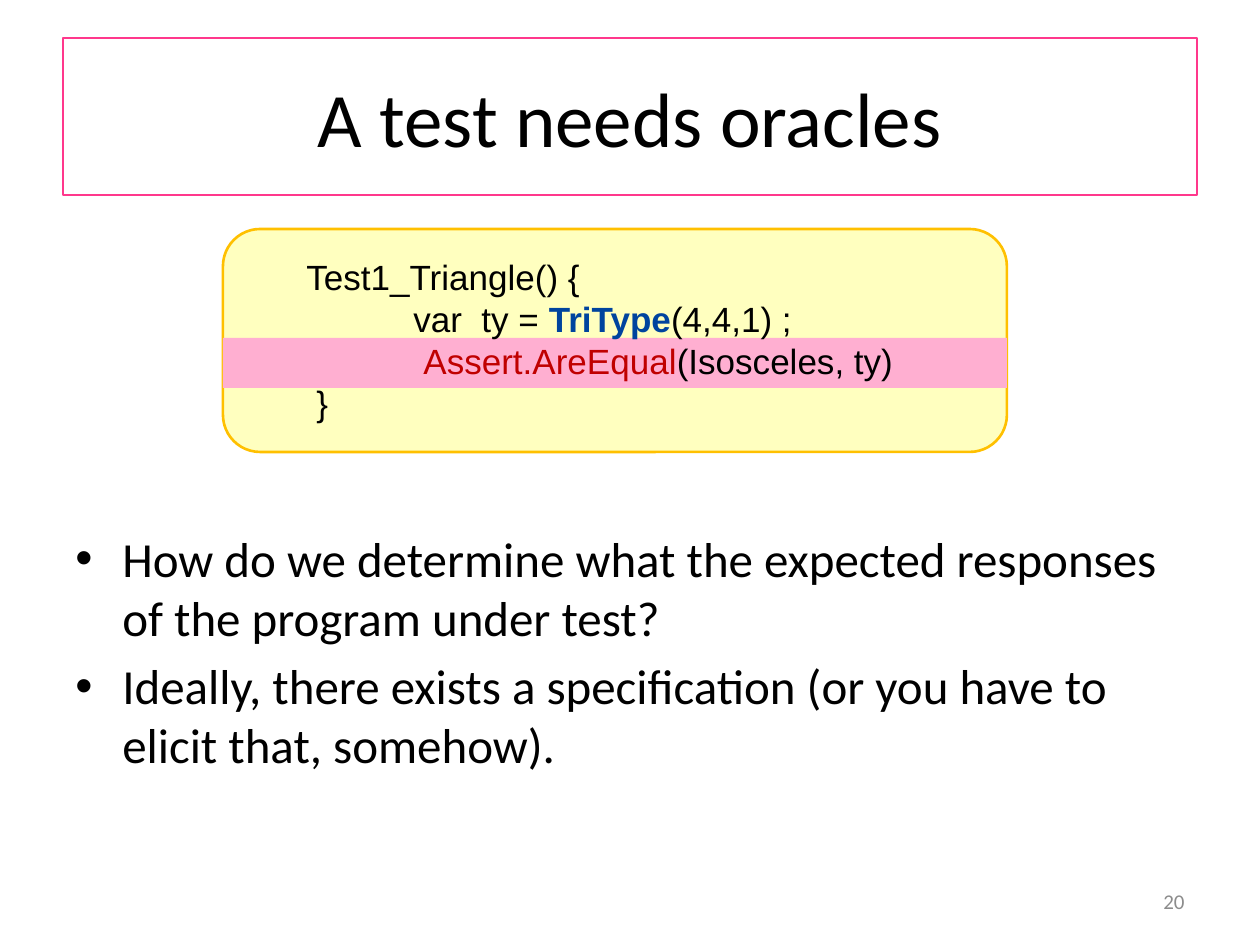
from pptx import Presentation
from pptx.dml.color import RGBColor as RGB
from pptx.enum.shapes import MSO_SHAPE as SHAPE
from pptx.enum.text import MSO_ANCHOR as ANCHOR, PP_ALIGN as ALIGN
from pptx.util import Pt
from lxml import etree

PX = 914400 / 126
THEME = {
    "text": "000000", "muted": "8C8C8C", "type": "00449E", "assert": "C00000",
    "title_line": "FF388C", "box": "FFFF00", "box_line": "FFC000", "band": "FFAFD1",
    "title_pt": 44, "body_pt": 28, "code_pt": 20, "number_pt": 12,
    "font": "Calibri", "code_font": "Arial",
}


def add_box(kind, at, fill=None, line=None, width=1):
    s = slide.shapes.add_shape(kind, *[round(v * PX) for v in at])
    s.shadow.inherit = False
    if fill:
        s.fill.solid()
        s.fill.fore_color.rgb = RGB.from_string(THEME[fill])
    else:
        s.fill.background()
    if line:
        s.line.color.rgb = RGB.from_string(THEME[line])
        s.line.width = Pt(width)
    else:
        s.line.fill.background()
    return s


def add_text(sp, paragraphs, size, font="font", anchor=ANCHOR.TOP, **para_format):
    """Each paragraph is a list of (text, colour, bold) runs."""
    tf = sp.text_frame
    tf.word_wrap = True
    tf.vertical_anchor = anchor
    for i, runs in enumerate(paragraphs):
        p = tf.paragraphs[0] if i == 0 else tf.add_paragraph()
        for name, value in para_format.items():
            setattr(p, name, value)
        for text, color, bold in runs:
            r = p.add_run()
            r.text = text
            for name, value in {"name": THEME[font], "size": Pt(THEME[size]), "bold": bold}.items():
                setattr(r.font, name, value)
            r.font.color.rgb = RGB.from_string(THEME[color])
    return tf


prs = Presentation()
prs.slide_width, prs.slide_height = round(1260 * PX), round(945 * PX)
slide = prs.slides.add_slide(prs.slide_layouts[6])

# Title
title = add_box(SHAPE.RECTANGLE, (63, 38, 1134, 157), line="title_line")
add_text(title, [[("A test needs oracles", "text", False)]], "title_pt",
         anchor=ANCHOR.MIDDLE, alignment=ALIGN.CENTER)

# Bulleted questions
bullets = [
    "How do we determine what the expected responses of the program under test?",
    "Ideally, there exists a specification (or you have to elicit that, somehow).",
]
body = add_box(SHAPE.RECTANGLE, (63, 522, 1134, 323))
tf = add_text(body, [[(t, "text", False)] for t in bullets], "body_pt",
              alignment=ALIGN.LEFT, space_before=Pt(5.6))
for p in tf.paragraphs:
    pPr = p._p.get_or_add_pPr()
    pPr.set("marL", str(round(47 * PX)))
    pPr.set("indent", str(round(-47 * PX)))
    ns = pPr.nsmap["a"]
    etree.SubElement(pPr, f"{{{ns}}}buFont", typeface="Arial")
    etree.SubElement(pPr, f"{{{ns}}}buChar", char="•")

# Slide number
number = add_box(SHAPE.RECTANGLE, (903, 876, 294, 50))
add_text(number, [[("20", "muted", False)]], "number_pt",
         anchor=ANCHOR.MIDDLE, alignment=ALIGN.RIGHT)

# Code panel with a highlighted assertion
panel = add_box(SHAPE.ROUNDED_RECTANGLE, (223, 229, 784, 223), "box", "box_line", 1.5)
color = panel.fill._xPr.find(".//{*}solidFill/{*}srgbClr")
etree.SubElement(color, f"{{{color.nsmap['a']}}}alpha", val="25000")
add_box(SHAPE.RECTANGLE, (223, 338, 784, 50), "band")

# Code lines: left indent in px, then runs
code = [
    (0, [("Test1_Triangle() {", "text", False)]),
    (107, [("var  ty = ", "text", False), ("TriType", "type", True), ("(4,4,1) ;", "text", False)]),
    (117, [("Assert.AreEqual", "assert", False), ("(Isosceles, ty)", "text", False)]),
    (10, [("}", "text", False)]),
]
listing = add_box(SHAPE.RECTANGLE, (294, 249, 673, 183))
tf = add_text(listing, [runs for _, runs in code], "code_pt", "code_font",
              alignment=ALIGN.LEFT, line_spacing=Pt(24))
for p, (indent, _) in zip(tf.paragraphs, code):
    p._p.get_or_add_pPr().set("marL", str(round(indent * PX)))

prs.save("out.pptx")
